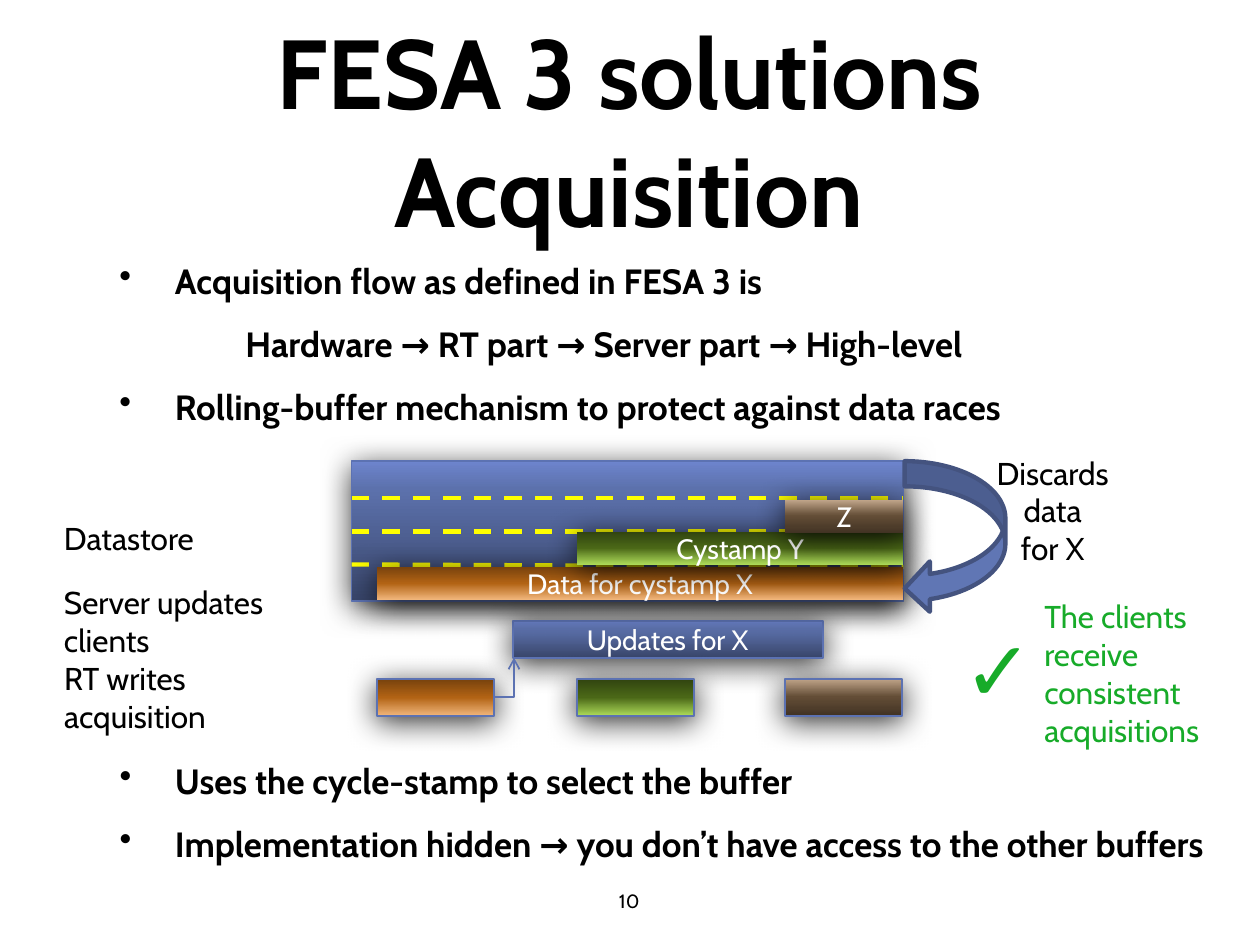
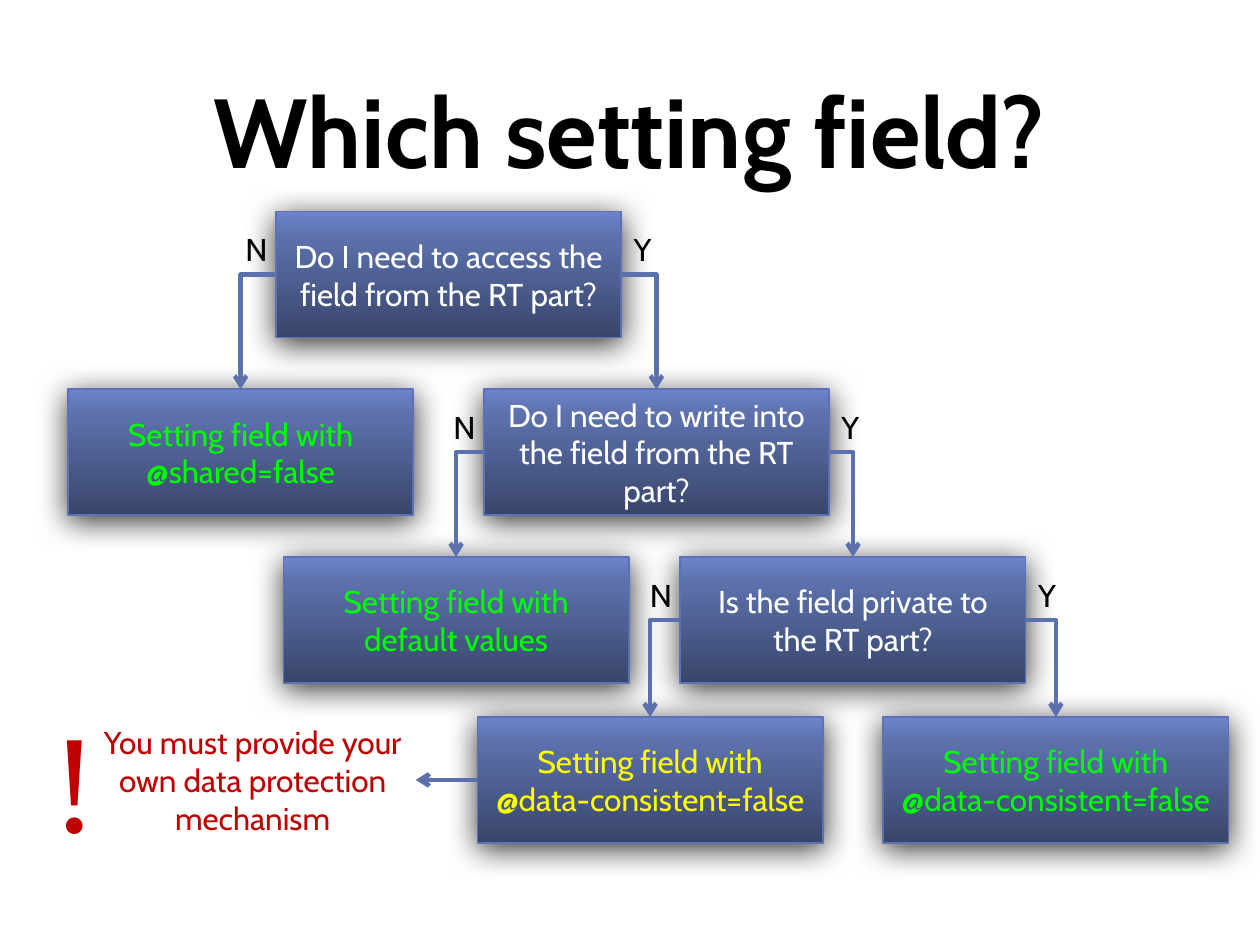
"""Builds two slides on FESA 3 acquisition and on choosing a setting field."""
from dataclasses import dataclass

from lxml import etree
from pptx import Presentation
from pptx import util as u
from pptx.dml.color import RGBColor
from pptx.enum import dml, shapes, text
from pptx.oxml import ns

EMU_PER_PX = 9144
LEFT, CENTER = text.PP_ALIGN.LEFT, text.PP_ALIGN.CENTER
TOP_SITE, LEFT_SITE, RIGHT_SITE = 0, 1, 3


@dataclass(frozen=True)
class Theme:
    """Colours, gradients and type sizes shared by the slides."""
    font: str = "Cabin"
    mark_font: str = "Times New Roman"
    black: str = "000000"
    white: str = "FFFFFF"
    edge: str = "5C72B2"
    flow: str = "5C71AC"
    arrow_fill: str = "6076B4"
    arrow_edge: str = "44537F"
    yellow: str = "FFFF00"
    lime: str = "00FF00"
    good: str = "17AB29"
    warning: str = "C00000"
    blue: tuple = (270, (0, "39466B"), (80, "5C71AC"), (100, "6D84CD"))
    orange: tuple = (90, (0, "77420D"), (50, "B26314"), (100, "F0B57A"))
    green: tuple = (90, (0, "314410"), (50, "4A6717"), (100, "ABD958"))
    brown: tuple = (270, (0, "423324"), (52, "634D36"), (100, "BEA388"))
    title: int = 56
    bullet: int = 20
    label: int = 18
    bar: int = 16
    number: int = 11
    check: int = 48
    mark: int = 80


THEME = Theme()


def px(*lengths):
    """Turn px lengths into EMU."""
    return [u.Emu(length * EMU_PER_PX) for length in lengths]


def rgb(value):
    """Return a colour object for a hex value."""
    return RGBColor.from_string(value)


def add_element(parent, tag, **attributes):
    """Append a drawing element with attributes and return it."""
    element = etree.SubElement(parent, ns.qn(tag))
    for name, value in attributes.items():
        element.set(name, str(value))
    return element


def style_text(frame, size, color, align=LEFT, bold=False, font=THEME.font):
    """Format every paragraph and run of a text frame."""
    for paragraph in frame.paragraphs:
        paragraph.alignment = align
        for run in paragraph.runs:
            run.font.name, run.font.size, run.font.bold = font, u.Pt(size), bold
            run.font.color.rgb = rgb(color)


def add_slide(presentation, title):
    """Add a white title-only slide with its formatted title."""
    slide = presentation.slides.add_slide(presentation.slide_layouts[5])
    slide.background.fill.solid()
    slide.background.fill.fore_color.rgb = rgb(THEME.white)
    shape = slide.shapes.title
    shape.left, shape.top, shape.width, shape.height = px(85, 12, 829, 181)
    frame = shape.text_frame
    frame.text = title
    frame.auto_size = text.MSO_AUTO_SIZE.NONE
    frame.vertical_anchor = text.MSO_ANCHOR.MIDDLE
    style_text(frame, THEME.title, THEME.black, CENTER, bold=True)
    return slide


def add_label(slide, box, words, color=THEME.black, size=THEME.label,
              wrap=False, align=LEFT, font=THEME.font):
    """Add a plain text box."""
    shape = slide.shapes.add_textbox(*px(*box))
    shape.text_frame.text = words
    shape.text_frame.word_wrap = wrap
    style_text(shape.text_frame, size, color, align, font=font)
    return shape


def add_bullets(slide, box, lines):
    """Add bold lines, each bulleted unless it is marked as a plain line."""
    shape = slide.shapes.add_textbox(*px(*box))
    frame = shape.text_frame
    frame.word_wrap = True
    frame.margin_bottom = 0
    frame.text = "\n".join(words for words, _ in lines)
    for index, (paragraph, (_, bulleted)) in enumerate(zip(frame.paragraphs, lines)):
        properties = paragraph._p.get_or_add_pPr()
        margin, = px(44 if bulleted else 100)
        properties.set("marL", str(margin))
        properties.set("indent", str(-margin if bulleted else 0))
        if bulleted:
            add_element(properties, "a:buChar", char="•")
        if index:
            paragraph.space_before = u.Pt(12)
    style_text(frame, THEME.bullet, THEME.black, bold=True)


def fill_gradient(shape, gradient):
    """Fill a shape with a linear gradient given as angle and stops."""
    angle, *stops = gradient
    shape.fill.background()
    properties = shape._element.spPr
    fill = etree.Element(ns.qn("a:gradFill"), rotWithShape="1")
    stop_list = add_element(fill, "a:gsLst")
    for position, color in stops:
        stop = add_element(stop_list, "a:gs", pos=position * 1000)
        add_element(stop, "a:srgbClr", val=color)
    add_element(fill, "a:lin", ang=angle * 60000, scaled=0)
    properties.replace(properties.find(ns.qn("a:noFill")), fill)


def add_glow_shadow(shape):
    """Give a shape a soft dark shadow below it."""
    shape.shadow.inherit = False
    effects = shape._element.spPr.find(ns.qn("a:effectLst"))
    shadow = add_element(effects, "a:outerShdw", blurRad=u.Pt(18), dist=u.Pt(3),
                         dir=90 * 60000, rotWithShape=0)
    color = add_element(shadow, "a:srgbClr", val=THEME.black)
    add_element(color, "a:alpha", val=80000)


def add_block(slide, box, gradient, words="", color=THEME.white,
              size=THEME.bar, outlined=True):
    """Add a shadowed gradient rectangle with centred text."""
    shape = slide.shapes.add_shape(shapes.MSO_SHAPE.RECTANGLE, *px(*box))
    fill_gradient(shape, gradient)
    frame = shape.text_frame
    if outlined:
        shape.line.color.rgb = rgb(THEME.edge)
        shape.line.width = u.Pt(1)
    else:
        shape.line.fill.background()
        frame.margin_left = frame.margin_right = 0
    add_glow_shadow(shape)
    frame.word_wrap = True
    frame.vertical_anchor = text.MSO_ANCHOR.MIDDLE
    frame.text = words
    style_text(frame, size, color, CENTER)
    return shape


def add_line(slide, ends, color, width=2.5, bent=False, arrow=False, dashed=False):
    """Add a straight or right-angled connector."""
    kind = shapes.MSO_CONNECTOR.ELBOW if bent else shapes.MSO_CONNECTOR.STRAIGHT
    connector = slide.shapes.add_connector(kind, *px(*ends))
    connector.line.color.rgb = rgb(color)
    connector.line.width = u.Pt(width)
    properties = connector._element.spPr
    if bent:
        properties.find(ns.qn("a:prstGeom")).set("prst", "bentConnector2")
    if dashed:
        connector.line.dash_style = dml.MSO_LINE.DASH
    if arrow:
        add_element(properties.find(ns.qn("a:ln")), "a:tailEnd", type="arrow")
    add_element(properties, "a:effectLst")
    return connector


def add_branch(slide, question, answer, site):
    """Link the side of a question to the top of its answer."""
    connector = add_line(slide, (0, 0, 0, 0), THEME.flow, bent=True, arrow=True)
    connector.begin_connect(question, site)
    connector.end_connect(answer, TOP_SITE)


def add_discard_arrow(slide):
    """Add the curved arrow for discarded data."""
    shape = slide.shapes.add_shape(shapes.MSO_SHAPE.CURVED_LEFT_ARROW,
                                   *px(718, 366, 80, 121))
    shape.shadow.inherit = False
    shape.fill.solid()
    shape.fill.fore_color.rgb = rgb(THEME.arrow_fill)
    shape.line.color.rgb = rgb(THEME.arrow_edge)
    shape.line.width = u.Pt(2.5)


def add_rolling_buffer(slide):
    """Draw the datastore, its buffers and the writers below."""
    store_left, store_right = 279, 717
    add_block(slide, (store_left, 366, store_right - store_left, 111), THEME.blue)
    add_block(slide, (407, 493, 246, 29), THEME.blue, "Updates for X")
    for start, end in ((422, 422), (448, 450), (395, 395)):
        add_line(slide, (store_left, start, store_right, end), THEME.yellow, dashed=True)
    for left, top, gradient, words in (
            (299, 450, THEME.orange, "Data for cystamp X"),
            (458, 422, THEME.green, "Cystamp Y"),
            (623, 397, THEME.brown, "Z")):
        add_block(slide, (left, 539, 93, 29), gradient)
        add_block(slide, (left, top, store_right - left, 26), gradient, words,
                  outlined=False)
    add_discard_arrow(slide)
    add_line(slide, (392, 553, 408, 522), THEME.edge, 1, bent=True, arrow=True)


def build_acquisition(presentation):
    """Build the slide on the acquisition flow."""
    slide = add_slide(presentation, "FESA 3 solutions\vAcquisition")
    number = add_label(slide, (458, 695, 83, 40), "10", size=THEME.number,
                       wrap=True, align=CENTER)
    number.text_frame.vertical_anchor = text.MSO_ANCHOR.MIDDLE
    add_bullets(slide, (85, 201, 857, 239), (
        ("Acquisition flow as defined in FESA 3 is", True),
        ("Hardware → RT part → Server part → High-level", False),
        ("Rolling-buffer mechanism to protect against data races", True)))
    add_bullets(slide, (85, 598, 885, 150), (
        ("Uses the cycle-stamp to select the buffer", True),
        ("Implementation hidden → you don’t have access to the other buffers", True)))
    add_rolling_buffer(slide)
    add_label(slide, (41, 407, 174, 40), "Datastore", wrap=True)
    add_label(slide, (41, 458, 186, 71), "Server updates\nclients")
    add_label(slide, (41, 518, 135, 71), "RT writes\nacquisition")
    add_label(slide, (778, 355, 115, 131), "Discards\ndata\nfor X", align=CENTER)
    add_label(slide, (819, 469, 176, 131),
              "The clients receive consistent acquisitions", THEME.good, wrap=True)
    add_label(slide, (755, 485, 73, 91), "✓", THEME.good, THEME.check)


def build_setting_choice(presentation):
    """Build the decision tree for setting fields."""
    slide = add_slide(presentation, "Which setting field?")
    width, height = 274, 100
    consistent = "Setting field with @data-consistent=false"
    nodes = {
        "access": (219, 168, "Do I need to access the field from the RT part?", THEME.white),
        "shared": (54, 309, "Setting field with @shared=false", THEME.lime),
        "write": (384, 309, "Do I need to write into the field from the RT part?", THEME.white),
        "private": (540, 442, "Is the field private to the RT part?", THEME.white),
        "unprotected": (379, 569, consistent, THEME.yellow),
        "protected": (701, 569, consistent, THEME.lime),
        "default": (225, 442, "Setting field with default values", THEME.lime),
    }
    blocks = {name: add_block(slide, (left, top, width, height), THEME.blue,
                              words, color, THEME.label)
              for name, (left, top, words, color) in nodes.items()}
    for question, no, yes in (("access", "shared", "write"),
                              ("write", "default", "private"),
                              ("private", "unprotected", "protected")):
        left, top, *_ = nodes[question]
        add_branch(slide, blocks[question], blocks[no], LEFT_SITE)
        add_branch(slide, blocks[question], blocks[yes], RIGHT_SITE)
        add_label(slide, (left - 34, top + 10, 37, 40), "N")
        add_label(slide, (left + width, top + 10, 34, 40), "Y")
    add_label(slide, (71, 569, 259, 101),
              "You must provide your own data protection mechanism",
              THEME.warning, wrap=True, align=CENTER)
    warning_line = add_line(slide, (379, 619, 330, 619), THEME.flow, arrow=True)
    warning_line.begin_connect(blocks["unprotected"], LEFT_SITE)
    add_label(slide, (31, 545, 40, 145), "ǃ", THEME.warning, THEME.mark,
              wrap=True, font=THEME.mark_font)


def main():
    """Build and save the presentation."""
    presentation = Presentation()
    presentation.slide_width, presentation.slide_height = px(1000, 750)
    build_acquisition(presentation)
    build_setting_choice(presentation)
    presentation.save("out.pptx")


if __name__ == "__main__":
    main()
